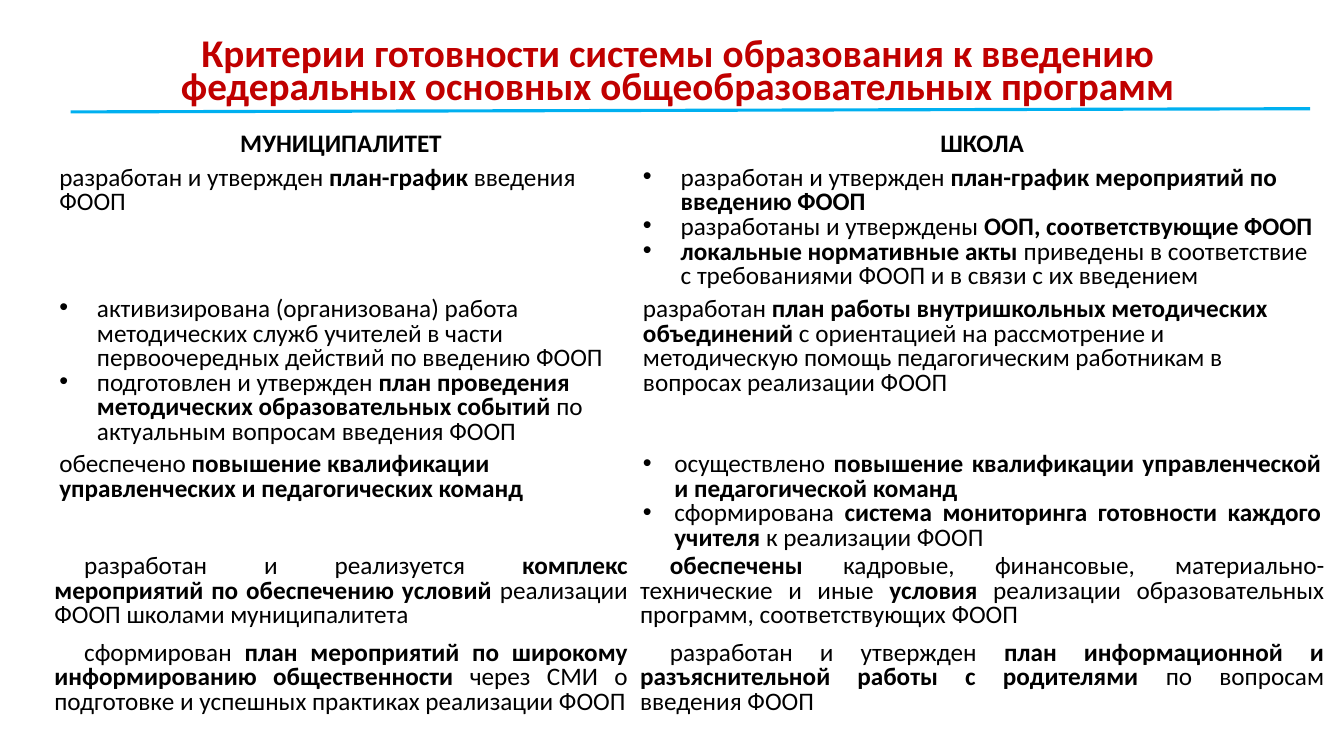
import pptx
import pptx.util
import pptx.dml.color
import pptx.enum.shapes
import pptx.enum.text
import pptx.oxml.ns
from lxml import etree

Cm = pptx.util.Cm
Pt = pptx.util.Pt
ALIGN = pptx.enum.text.PP_ALIGN
COLORS = {"title": "C00000", "rule": "00B0F0", "text": "000000", "cell": "FFFFFF"}
FONT = "Calibri"
TITLE = ("**Критерии готовности системы образования к введению "
         "федеральных основных общеобразовательных программ**")

# Paragraph kinds: alignment, left margin and first-line indent in cm, line spacing, bullet
KINDS = {
    "heading": (ALIGN.CENTER, 0, 0, 0.7, False),
    "plain": (ALIGN.LEFT, 0, 0, 0.8, False),
    "bullet": (ALIGN.LEFT, 0.95, -0.95, 0.8, True),
    "wide bullet": (ALIGN.JUSTIFY, 0.79, -0.79, 0.8, True),
    "indented": (ALIGN.JUSTIFY, 0, 0.75, 0.8, False),
}

COLUMN_WIDTHS = (14.71, 17.6)
INDENTED_MARGINS = (0.13, 0.18)

# Each row: height in cm, then (kind, paragraphs) for municipality and school
ROWS = [
    (0.79, ("heading", ["**МУНИЦИПАЛИТЕТ**"]), ("heading", ["**ШКОЛА**"])),
    (3.18,
     ("plain", ["разработан и утвержден **план-график** введения ФООП"]),
     ("bullet", [
         "разработан и утвержден **план-график мероприятий по введению ФООП**",
         "разработаны и утверждены **ООП, соответствующие ФООП**",
         "**локальные нормативные акты **приведены в соответствие "
         "с требованиями ФООП и в связи с их введением"])),
    (3.76,
     ("bullet", [
         "активизирована (организована) работа методических служб учителей "
         "в части первоочередных действий по введению ФООП",
         "подготовлен и утвержден **план проведения методических "
         "образовательных событий **по актуальным вопросам введения ФООП"]),
     ("plain", [
         "разработан **план работы внутришкольных методических объединений **"
         "с ориентацией на рассмотрение и методическую помощь "
         "педагогическим работникам в вопросах реализации ФООП"])),
    (2.59,
     ("plain", ["обеспечено **повышение квалификации управленческих "
                "и педагогических команд**"]),
     ("wide bullet", [
         "осуществлено **повышение квалификации управленческой "
         "и педагогической команд**",
         "сформирована **система мониторинга готовности каждого учителя **"
         "к реализации ФООП"])),
    (2.18,
     ("indented", ["разработан и реализуется **комплекс мероприятий по обеспечению "
                   "условий **реализации ФООП школами муниципалитета"]),
     ("indented", ["**обеспечены** кадровые, финансовые, материально-технические "
                   "и иные **условия** реализации образовательных программ, "
                   "соответствующих ФООП"])),
    (2.18,
     ("indented", ["сформирован **план мероприятий по широкому информированию "
                   "общественности **через СМИ о подготовке и успешных практиках "
                   "реализации ФООП"]),
     ("indented", ["разработан и утвержден **план информационной и разъяснительной "
                   "работы с родителями **по вопросам введения ФООП"])),
]


def rgb(name):
    return pptx.dml.color.RGBColor.from_string(COLORS[name])


def write_paragraph(para, marked, kind, size, color):
    """Fill a paragraph; text between double asterisks is bold."""
    align, left, indent, spacing, bullet = KINDS[kind]
    para.alignment = align
    para.line_spacing = spacing
    for index, piece in enumerate(marked.split("**")):
        if piece:
            span = para.add_run()
            span.text = piece
            span.font.name = FONT
            span.font.size = Pt(size)
            span.font.bold = index % 2 == 1
            span.font.color.rgb = rgb(color)
    props = para._p.get_or_add_pPr()
    props.set("marL", str(Cm(left)))
    props.set("indent", str(Cm(indent)))
    if bullet:
        qn = pptx.oxml.ns.qn
        etree.SubElement(props, qn("a:buFont"), typeface="Arial")
        etree.SubElement(props, qn("a:buChar"), char="•")


def add_title(page, left, top, width, height):
    box = page.shapes.add_textbox(Cm(left), Cm(top), Cm(width), Cm(height))
    frame = box.text_frame
    frame.word_wrap = True
    frame.margin_top = Cm(0.2)
    write_paragraph(frame.paragraphs[0], TITLE, "heading", 28, "title")


def add_rule(page, left, top, width, rise):
    rule = page.shapes.add_connector(
        pptx.enum.shapes.MSO_CONNECTOR.STRAIGHT,
        Cm(left), Cm(top), Cm(left + width), Cm(top - rise))
    rule.line.color.rgb = rgb("rule")
    rule.line.width = Pt(2.25)
    etree.SubElement(rule._element.spPr, pptx.oxml.ns.qn("a:effectLst"))


def fill_cell(cell, kind, paragraphs, side_margin):
    cell.fill.solid()
    cell.fill.fore_color.rgb = rgb("cell")
    if kind == "indented":
        cell.margin_left = cell.margin_right = Cm(side_margin)
        cell.margin_top = cell.margin_bottom = 0
    frame = cell.text_frame
    for index, marked in enumerate(paragraphs):
        para = frame.add_paragraph() if index else frame.paragraphs[0]
        write_paragraph(para, marked, kind, 18, "text")


def add_criteria(page, left, top):
    width = sum(COLUMN_WIDTHS)
    height = sum(row[0] for row in ROWS)
    table = page.shapes.add_table(len(ROWS), len(COLUMN_WIDTHS), Cm(left), Cm(top),
                                  Cm(width), Cm(height)).table
    for column, column_width in zip(table.columns, COLUMN_WIDTHS):
        column.width = Cm(column_width)
    for row, (row_height, *contents) in zip(table.rows, ROWS):
        row.height = Cm(row_height)
        for cell, content, margin in zip(row.cells, contents, INDENTED_MARGINS):
            fill_cell(cell, *content, margin)


def main():
    deck = pptx.Presentation()
    deck.slide_width, deck.slide_height = Cm(33.87), Cm(19.05)
    page = deck.slides.add_slide(deck.slide_layouts[6])
    add_title(page, 1.78, 0.84, 30.58, 1.45)
    add_rule(page, 1.78, 2.82, 31.24, 0.08)
    add_criteria(page, 1.24, 3.28)
    deck.save("out.pptx")


if __name__ == "__main__":
    main()
